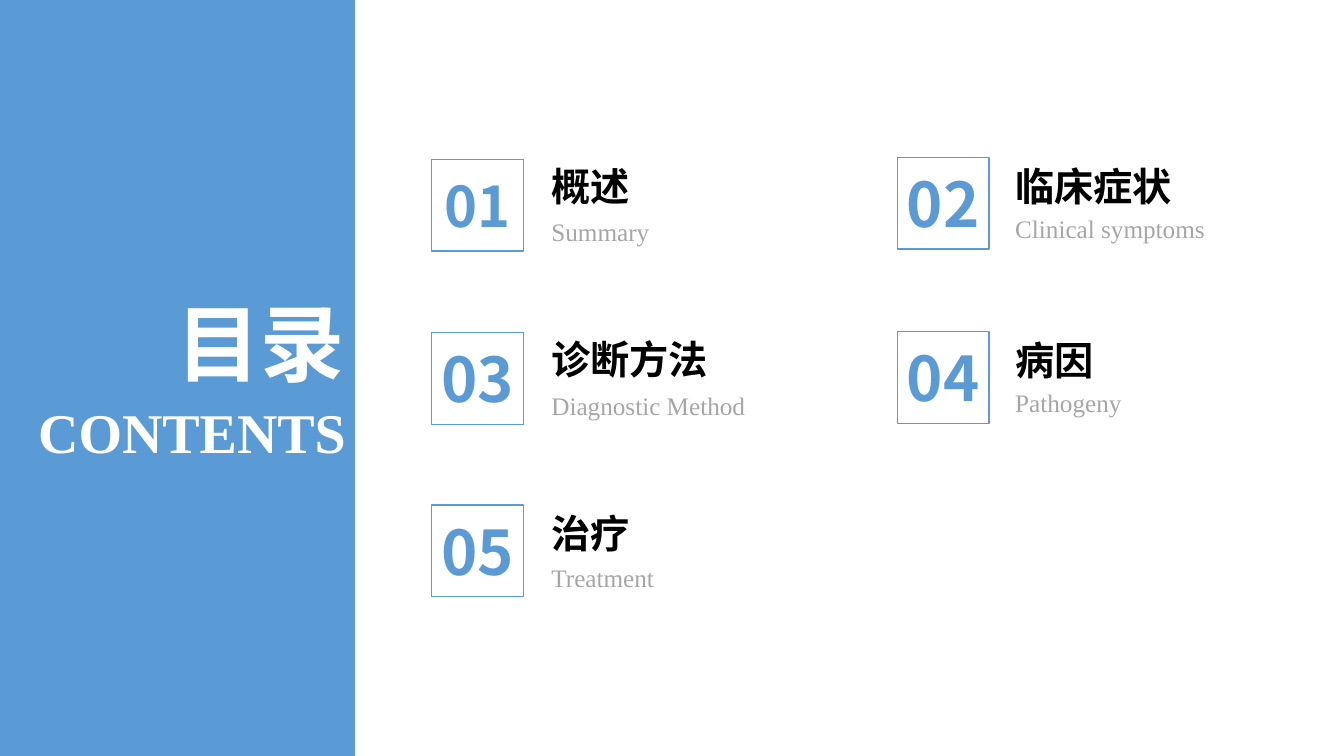
from lxml.etree import SubElement
from pptx import Presentation
from pptx.dml.color import RGBColor
from pptx.enum.shapes import MSO_SHAPE as Preset
from pptx.enum.text import MSO_ANCHOR as Anchor, MSO_AUTO_SIZE as AutoSize, PP_ALIGN as Align
from pptx.oxml.ns import qn
from pptx.util import Inches, Pt

BLUE = RGBColor(0x5B, 0x9B, 0xD5)
WHITE = RGBColor(0xFF, 0xFF, 0xFF)
BLACK = RGBColor(0x00, 0x00, 0x00)
GREY = RGBColor(0xA6, 0xA6, 0xA6)
SANS = "Noto Sans CJK SC"
SERIF = "Times New Roman"


def write(box, text, *, size, font, color, bold=True, align=Align.LEFT):
    frame = box.text_frame
    frame.word_wrap = True
    frame.auto_size = AutoSize.SHAPE_TO_FIT_TEXT
    frame.vertical_anchor = Anchor.TOP
    paragraph = frame.paragraphs[0]
    paragraph.alignment = align
    run = paragraph.add_run()
    run.text = text
    run.font.size = Pt(size)
    run.font.bold = bold
    run.font.color.rgb = color
    run.font.name = font
    SubElement(run._r.get_or_add_rPr(), qn("a:ea"), typeface=font)


def place(left, top, width, height):
    return [Inches(value) for value in (left, top, width, height)]


prs = Presentation()
prs.slide_width = Inches(13.33)
prs.slide_height = Inches(7.5)
slide = prs.slides.add_slide(prs.slide_layouts[5])

title = slide.shapes.title
title.left, title.top, title.width, title.height = place(0.98, 2.84, 2.54, 1.11)
write(title, "目录", size=60, font=SANS, color=WHITE, align=Align.RIGHT)

side_panel = slide.shapes.add_shape(Preset.RECTANGLE, *place(0, 0, 3.52, 7.5))
side_panel.shadow.inherit = False
side_panel.fill.solid()
side_panel.fill.fore_color.rgb = BLUE
side_panel.line.fill.background()
title.element.addprevious(side_panel.element)

subtitle = slide.shapes.add_textbox(*place(0, 3.89, 3.53, 0.77))
write(subtitle, "CONTENTS", size=40, font=SERIF, color=WHITE, align=Align.RIGHT)

LEFT_COLUMN = (4.28, 5.37)
RIGHT_COLUMN = (8.9, 9.97)
FRAME_SIDE = 0.91
NUMBER_WIDTH = 0.98
topics = [
    ("01", 40, 0.77, "概述", "Summary", LEFT_COLUMN, 1.58, 1.56, 2.1),
    ("02", 44, 0.84, "临床症状", "Clinical symptoms", RIGHT_COLUMN, 1.56, 1.56, 2.07),
    ("03", 44, 0.84, "诊断方法", "Diagnostic Method", LEFT_COLUMN, 3.3, 3.28, 3.82),
    ("04", 44, 0.84, "病因", "Pathogeny", RIGHT_COLUMN, 3.29, 3.29, 3.79),
    ("05", 44, 0.84, "治疗", "Treatment", LEFT_COLUMN, 5.01, 5, 5.53),
]

for (number, number_size, number_height, heading, translation,
     (frame_left, text_left), frame_top, heading_top, translation_top) in topics:
    topic = slide.shapes.add_group_shape().shapes

    heading_box = topic.add_textbox(*place(text_left, heading_top, 2.62, 0.57))
    write(heading_box, heading, size=28, font=SANS, color=BLACK)

    translation_box = topic.add_textbox(*place(text_left, translation_top, 2.62, 0.4))
    write(translation_box, translation, size=18, font=SERIF, color=GREY, bold=False)

    number_left = frame_left + (FRAME_SIDE - NUMBER_WIDTH) / 2
    number_top = frame_top + (FRAME_SIDE - number_height) / 2
    number_box = topic.add_textbox(*place(number_left, number_top, NUMBER_WIDTH, number_height))
    write(number_box, number, size=number_size, font=SANS, color=BLUE, align=Align.CENTER)

    number_frame = topic.add_shape(
        Preset.RECTANGLE, *place(frame_left, frame_top, FRAME_SIDE, FRAME_SIDE))
    number_frame.shadow.inherit = False
    number_frame.fill.background()
    number_frame.line.color.rgb = BLUE
    number_frame.line.width = Pt(1)

prs.save("out.pptx")
